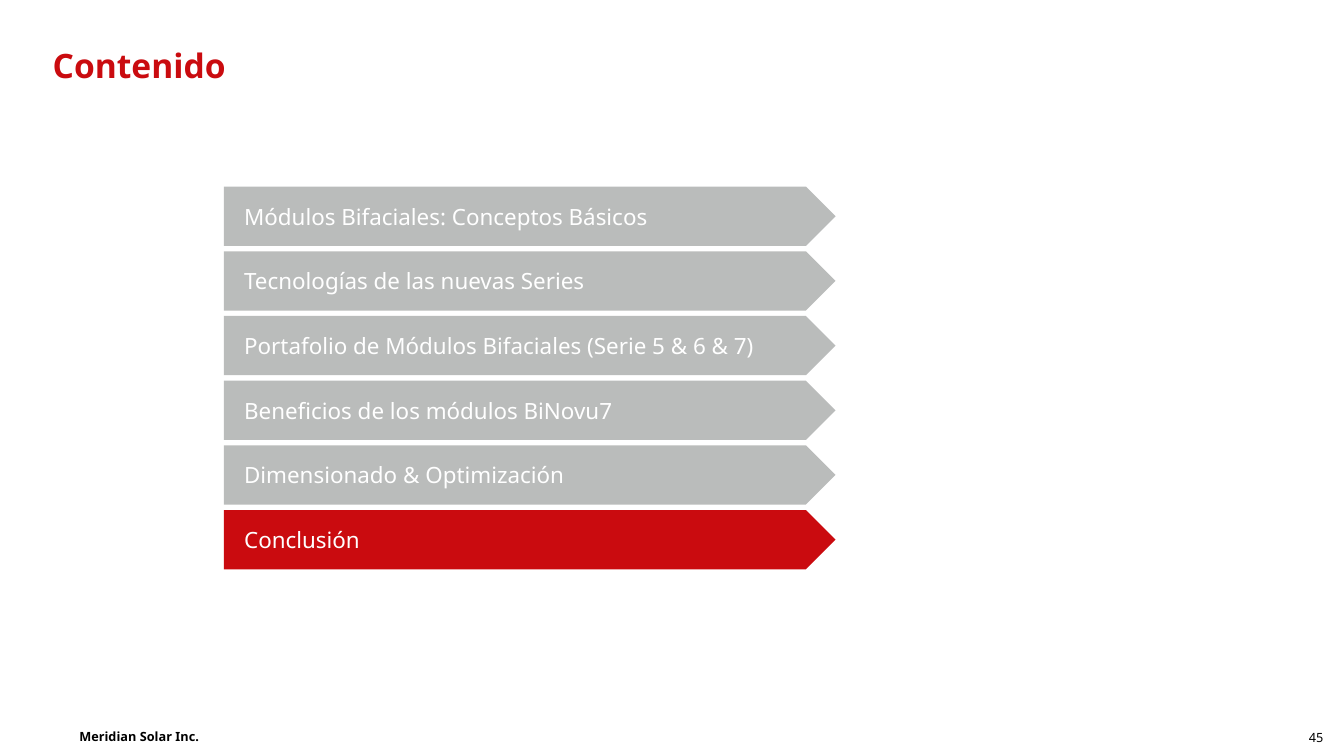
from pptx import Presentation
from pptx.dml.color import RGBColor
from pptx.enum.shapes import MSO_SHAPE
from pptx.enum.text import MSO_ANCHOR, MSO_AUTO_SIZE, PP_ALIGN
from pptx.util import Pt

PENTAGON = MSO_SHAPE.PENTAGON
TOP, MIDDLE = MSO_ANCHOR.TOP, MSO_ANCHOR.MIDDLE
LEFT, RIGHT = PP_ALIGN.LEFT, PP_ALIGN.RIGHT
NO_AUTOFIT = MSO_AUTO_SIZE.NONE

FONT = "Noto Sans"
RED, GRAY, WHITE, BLACK = "CA0B0F", "BABCBB", "FFFFFF", "000000"
TOPICS = [
    "Módulos Bifaciales: Conceptos Básicos",
    "Tecnologías de las nuevas Series",
    "Portafolio de Módulos Bifaciales (Serie 5 & 6 & 7)",
    "Beneficios de los módulos BiNovu7",
    "Dimensionado & Optimización",
    "Conclusión",
]
CURRENT_TOPIC = "Conclusión"


def color(value):
    """Turn a hex string into a colour."""
    return RGBColor.from_string(value)


def write(shape, text, size, text_color, bold=False, align=LEFT, anchor=MIDDLE, inset=0, wrap=True):
    """Fill a shape with one formatted run."""
    frame = shape.text_frame
    frame.auto_size = NO_AUTOFIT
    frame.word_wrap = wrap
    frame.vertical_anchor = anchor
    frame.margin_left = frame.margin_right = Pt(inset)
    frame.margin_top = frame.margin_bottom = 0
    paragraph = frame.paragraphs[0]
    paragraph.alignment = align
    run = paragraph.add_run()
    run.text = text
    run.font.name = FONT
    run.font.size = Pt(size)
    run.font.bold = bold
    run.font.color.rgb = color(text_color)


def add_title(slide, text, left, top, width, height):
    """Place the slide title in its placeholder."""
    title = slide.shapes.title
    title.left, title.top = Pt(left), Pt(top)
    title.width, title.height = Pt(width), Pt(height)
    write(title, text, 18, RED, bold=True, anchor=TOP)


def add_agenda(slide, left, top, width, height, gap=2.9):
    """Stack the topic arrows evenly and highlight the current one."""
    arrow_height = (height - gap * (len(TOPICS) - 1)) / len(TOPICS)
    for index, topic in enumerate(TOPICS):
        arrow_top = top + index * (arrow_height + gap)
        arrow = slide.shapes.add_shape(
            PENTAGON, Pt(left), Pt(arrow_top), Pt(width), Pt(arrow_height))
        arrow.adjustments[0] = 0.5
        arrow.shadow.inherit = False
        arrow.fill.solid()
        arrow.fill.fore_color.rgb = color(RED if topic == CURRENT_TOPIC else GRAY)
        arrow.line.fill.background()
        write(arrow, topic, 12, WHITE, inset=10.8)


def add_footer(slide, left, top, width, height):
    """Place the company name at the left and the page number at the right."""
    number_width = 20
    company = slide.shapes.add_textbox(Pt(left), Pt(top), Pt(96.5), Pt(height))
    write(company, "Meridian Solar Inc.", 6.8, BLACK, bold=True, wrap=False)
    number = slide.shapes.add_textbox(
        Pt(left + width - number_width), Pt(top), Pt(number_width), Pt(height + 1.4))
    write(number, "45", 6.8, BLACK, align=RIGHT, wrap=False)


def main():
    """Build and save the contents slide."""
    presentation = Presentation()
    presentation.slide_width, presentation.slide_height = Pt(720), Pt(405)
    slide = presentation.slides.add_slide(presentation.slide_layouts[5])
    add_title(slide, "Contenido", 28.2, 23.8, 469.4, 51)
    add_agenda(slide, 120, 100, 327.6, 205)
    add_footer(slide, 42.5, 387.6, 666.5, 13.6)
    presentation.save("out.pptx")


if __name__ == "__main__":
    main()
